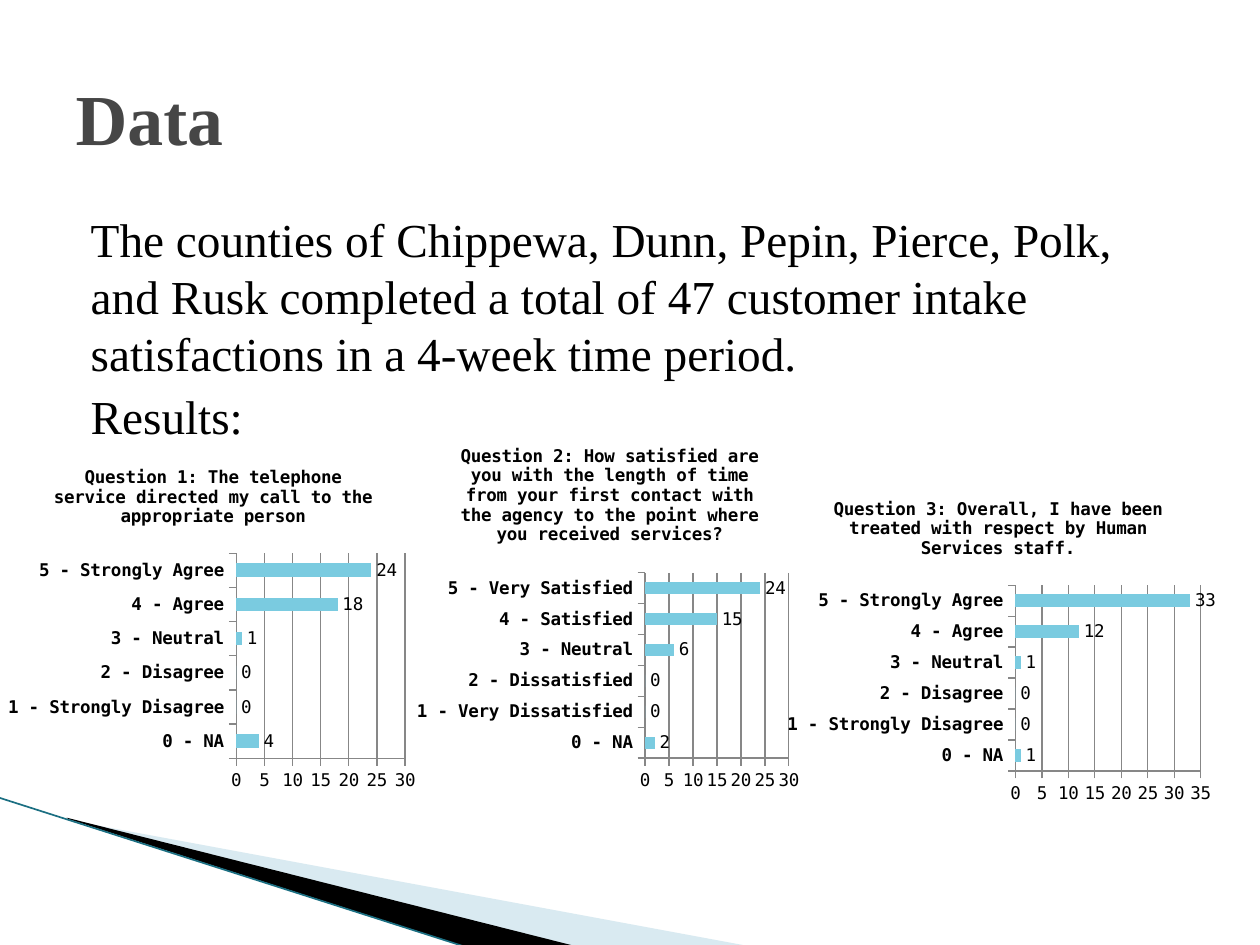
from lxml import etree
from pptx import Presentation
from pptx.chart.data import CategoryChartData
from pptx.dml.color import RGBColor
from pptx.enum.chart import XL_CHART_TYPE, XL_LABEL_POSITION, XL_TICK_MARK
from pptx.enum.shapes import MSO_CONNECTOR
from pptx.enum.text import MSO_ANCHOR, MSO_AUTO_SIZE, PP_ALIGN
from pptx.oxml.ns import qn
from pptx.util import Inches, Pt

BAR = XL_CHART_TYPE.BAR_CLUSTERED
OUTSIDE_END = XL_LABEL_POSITION.OUTSIDE_END
TICK_OUT, TICK_NONE = XL_TICK_MARK.OUTSIDE, XL_TICK_MARK.NONE
STRAIGHT = MSO_CONNECTOR.STRAIGHT
MIDDLE, TOP = MSO_ANCHOR.MIDDLE, MSO_ANCHOR.TOP
NO_AUTOSIZE = MSO_AUTO_SIZE.NONE
LEFT = PP_ALIGN.LEFT

BLACK = RGBColor(0, 0, 0)
TITLE_GRAY = RGBColor(0x46, 0x46, 0x46)
AXIS_GRAY = RGBColor(0x87, 0x87, 0x87)
PALE_BLUE = RGBColor(0xA0, 0xCB, 0xDC)
EDGE_TEAL = RGBColor(0x1B, 0x6F, 0x82)
BAR_BLUE = RGBColor(0x7A, 0xCB, 0xE0)
SERIF = "Times New Roman"
MONO = "DejaVu Sans Mono"

TITLE = "Data"
BODY = [
    "The counties of Chippewa, Dunn, Pepin, Pierce, Polk, and Rusk completed "
    "a total of 47 customer intake satisfactions in a 4-week time period.",
    "Results:",
]
AGREEMENT = ["0 - NA", "1 - Strongly Disagree", "2 - Disagree",
             "3 - Neutral", "4 - Agree", "5 - Strongly Agree"]
SATISFACTION = ["0 - NA", "1 - Very Dissatisfied", "2 - Dissatisfied",
                "3 - Neutral", "4 - Satisfied", "5 - Very Satisfied"]
QUESTIONS = [
    dict(title="Question 1: The telephone service directed my call to the "
               "appropriate person",
         cats=AGREEMENT, vals=[4, 0, 0, 1, 18, 24], top=30,
         box=(0, 3.67, 3.35, 2.67), plot=(0.56, 0.27, 0.4, 0.61)),
    dict(title="Question 2: How satisfied are you with the length of time from "
               "your first contact with the agency to the point where you "
               "received services?",
         cats=SATISFACTION, vals=[2, 0, 0, 6, 15, 24], top=30,
         box=(3.25, 3.5, 3.17, 2.83), plot=(0.59, 0.37, 0.36, 0.52)),
    dict(title="Question 3: Overall, I have been treated with respect by Human "
               "Services staff.",
         cats=AGREEMENT, vals=[1, 0, 0, 1, 12, 33], top=35,
         box=(6.17, 3.92, 3.5, 2.5), plot=(0.54, 0.29, 0.42, 0.59)),
]
TITLE_CORNER = (0.12, 0)
WEDGES = [
    ([(0.55, 6.51), (5.95, 7.51), (4.56, 7.51), (0.55, 6.5)], PALE_BLUE, 40),
    ([(0.53, 6.49), (4.57, 7.51), (3.72, 7.52), (0.54, 6.5)], BLACK, 100),
]
EDGE = (-0.01, 6.33, 3.71, 7.52)


def style(font, name, size, color, bold=False):
    font.name, font.size, font.bold = name, Pt(size), bold
    font.color.rgb = color


def place(sp, left, top, width, height, anchor):
    sp.left, sp.top = Inches(left), Inches(top)
    sp.width, sp.height = Inches(width), Inches(height)
    tf = sp.text_frame
    tf.word_wrap, tf.auto_size, tf.vertical_anchor = True, NO_AUTOSIZE, anchor
    return tf


def add_wedge(s, points, color, opacity):
    start, *rest = [(Inches(x), Inches(y)) for x, y in points]
    builder = s.shapes.build_freeform(*start)
    builder.add_line_segments(rest)
    sp = builder.convert_to_shape()
    sp.shadow.inherit = False
    sp.line.fill.background()
    sp.fill.solid()
    sp.fill.fore_color.rgb = color
    if opacity < 100:
        clr = next(sp.element.iter(qn("a:srgbClr")))
        etree.SubElement(clr, qn("a:alpha")).set("val", str(opacity * 1000))


def set_layout(parent, index, settings):
    for old in parent.findall(qn("c:layout")):
        parent.remove(old)
    layout = etree.Element(qn("c:layout"))
    parent.insert(index, layout)
    manual = etree.SubElement(layout, qn("c:manualLayout"))
    for tag, value in settings:
        etree.SubElement(manual, qn("c:" + tag)).set("val", str(value))


def add_question(s, question):
    data = CategoryChartData()
    data.categories = question["cats"]
    data.add_series("Series 1", question["vals"])
    box = [Inches(v) for v in question["box"]]
    chart = s.shapes.add_chart(BAR, *box, data).chart
    style(chart.font, MONO, 10, BLACK)
    chart.has_legend = False
    chart.has_title = True
    r = chart.chart_title.text_frame.paragraphs[0].add_run()
    r.text = question["title"]
    style(r.font, MONO, 10, BLACK, True)
    chart.chart_title.include_in_layout = False

    value_axis = chart.value_axis
    value_axis.minimum_scale, value_axis.maximum_scale = 0, question["top"]
    value_axis.major_unit = 5
    value_axis.has_major_gridlines = True
    value_axis.major_gridlines.format.line.color.rgb = AXIS_GRAY
    for axis, bold in ((value_axis, False), (chart.category_axis, True)):
        axis.major_tick_mark, axis.minor_tick_mark = TICK_OUT, TICK_NONE
        axis.format.line.color.rgb = AXIS_GRAY
        style(axis.tick_labels.font, MONO, 10, BLACK, bold)

    plot = chart.plots[0]
    plot.gap_width = 150
    plot.vary_by_categories = False
    fill = plot.series[0].format.fill
    fill.solid()
    fill.fore_color.rgb = BAR_BLUE
    labels = plot.series[0].data_labels
    labels.show_value = True
    labels.position = OUTSIDE_END
    style(labels.font, MONO, 10, BLACK)

    edges = [("xMode", "edge"), ("yMode", "edge")]
    title = next(chart.element.iter(qn("c:title")))
    set_layout(title, 1, edges + list(zip("xy", TITLE_CORNER)))
    area = next(chart.element.iter(qn("c:plotArea")))
    inner = [("layoutTarget", "inner")]
    set_layout(area, 0, inner + edges + list(zip("xywh", question["plot"])))


def main():
    prs = Presentation()
    prs.slide_width, prs.slide_height = Inches(10), Inches(7.5)
    s = prs.slides.add_slide(prs.slide_layouts[1])

    for wedge in WEDGES:
        add_wedge(s, *wedge)
    edge = s.shapes.add_connector(STRAIGHT, *[Inches(v) for v in EDGE])
    edge.line.color.rgb, edge.line.width = EDGE_TEAL, Pt(0.95)
    etree.SubElement(edge.element.spPr, qn("a:effectLst"))

    p = place(s.shapes.title, 0.5, 0.3, 9, 1.25, MIDDLE).paragraphs[0]
    p.alignment = LEFT
    r = p.add_run()
    r.text = TITLE
    style(r.font, SERIF, 41, TITLE_GRAY, True)

    tf = place(s.placeholders[1], 0.5, 1.62, 9, 4.95, TOP)
    for i, text in enumerate(BODY):
        p = tf.add_paragraph() if i else tf.paragraphs[0]
        pPr = p._p.get_or_add_pPr()
        pPr.set("marL", str(Inches(0.12)))
        pPr.set("indent", "0")
        etree.SubElement(pPr, qn("a:buNone"))
        p.space_before = Pt(4 if i else 0)
        r = p.add_run()
        r.text = text
        style(r.font, SERIF, 27, BLACK)

    for question in QUESTIONS:
        add_question(s, question)
    prs.save("out.pptx")


if __name__ == "__main__":
    main()
